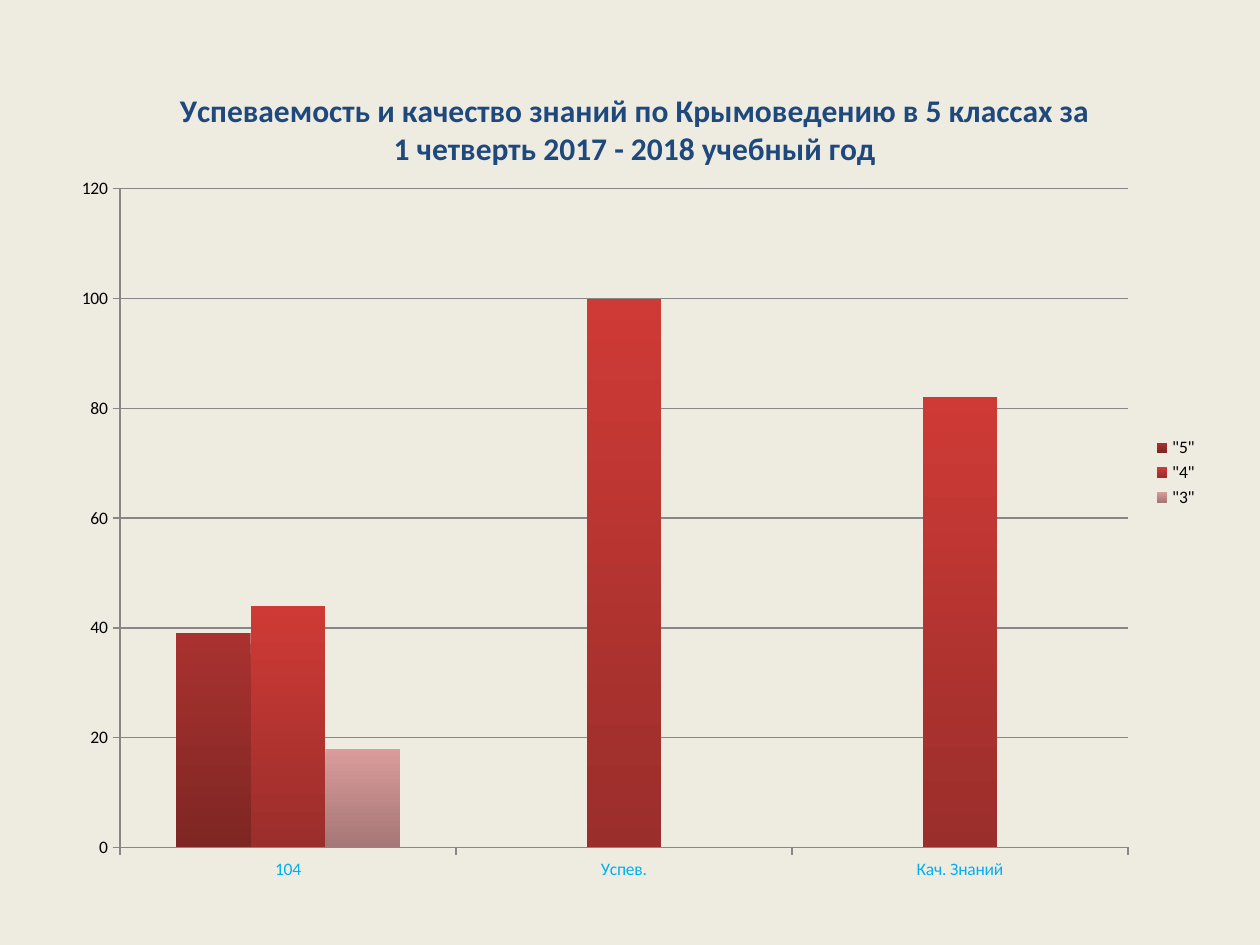
"""Build a slide with a column chart of grades and pass rates for fifth-year classes."""
from lxml import etree
from pptx import Presentation
from pptx.chart.data import CategoryChartData
from pptx.dml.color import RGBColor
from pptx.enum.chart import XL_CHART_TYPE, XL_LEGEND_POSITION, XL_TICK_MARK
from pptx.oxml.ns import qn
from pptx.util import Cm, Pt

COLUMNS = XL_CHART_TYPE.COLUMN_CLUSTERED
LEGEND_RIGHT = XL_LEGEND_POSITION.RIGHT
TICK_OUTSIDE = XL_TICK_MARK.OUTSIDE
COLORS = {
    "background": "EEECE1", "title": "1F497D", "text": "000000",
    "categories": "00B0F0", "lines": "878787",
}
SERIES = [
    ('"5"', (39, None, None), ("A93230", "7E2623")),
    ('"4"', (44, 100, 82), ("CF3A36", "9A2E2B")),
    ('"3"', (18, None, None), ("DA9C9B", "A57776")),
]


def color(name):
    return RGBColor.from_string(COLORS[name])


def set_layout(parent, before, **values):
    for old_layout in parent.findall(qn("c:layout")):
        parent.remove(old_layout)
    layout = etree.Element(qn("c:layout"))
    manual = etree.SubElement(layout, qn("c:manualLayout"))
    for key, value in values.items():
        etree.SubElement(manual, qn(f"c:{key}")).set("val", str(value))
    parent.find(qn(before)).addprevious(layout)


presentation = Presentation()
presentation.slide_width = Cm(25.4)
presentation.slide_height = Cm(19.05)
slide = presentation.slides.add_slide(presentation.slide_layouts[6])
slide.background.fill.solid()
slide.background.fill.fore_color.rgb = color("background")

chart_data = CategoryChartData()
chart_data.categories = ["104", "Успев.", "Кач. Знаний"]
for name, values, _ in SERIES:
    chart_data.add_series(name, values)
chart = slide.shapes.add_chart(
    COLUMNS, Cm(1.19), Cm(0.99), Cm(23.22), Cm(17.07), chart_data
).chart
chart.font.name = "Calibri"
chart.font.size = Pt(10)
chart.font.color.rgb = color("text")

title = chart.chart_title
title.include_in_layout = False
paragraph = title.text_frame.paragraphs[0]
paragraph.text = (
    "Успеваемость и качество знаний по Крымоведению в 5 классах за "
    "1 четверть 2017 - 2018 учебный год"
)
title_font = paragraph.runs[0].font
title_font.name = "Calibri"
title_font.size = Pt(18)
title_font.bold = True
title_font.color.rgb = color("title")
set_layout(title._element, "c:overlay", xMode="edge", yMode="edge", x=0.1, y=0.04)

plot = chart.plots[0]
plot.gap_width = 150
plot.overlap = 0
plot.vary_by_categories = False
set_layout(
    plot._element.getparent(), "c:barChart", layoutTarget="inner",
    xMode="edge", yMode="edge", x=0.053, y=0.165, w=0.875, h=0.778,
)
for series, (_, _, shades) in zip(plot.series, SERIES):
    fill = series.format.fill
    fill.gradient()
    fill.gradient_angle = 270
    for stop, shade, position in zip(fill.gradient_stops, shades, (0, 1)):
        stop.color.rgb = RGBColor.from_string(shade)
        stop.position = position
    series.format.line.fill.background()

value_axis = chart.value_axis
value_axis.minimum_scale = 0
value_axis.maximum_scale = 120
value_axis.major_unit = 20
value_axis.has_major_gridlines = True
for axis in (chart.category_axis, value_axis):
    axis.major_tick_mark = TICK_OUTSIDE
    axis.format.line.color.rgb = color("lines")
    axis.tick_labels.font.size = Pt(10)
value_axis.major_gridlines.format.line.color.rgb = color("lines")
chart.category_axis.tick_labels.font.color.rgb = color("categories")

chart.has_legend = True
chart.legend.position = LEGEND_RIGHT
chart.legend.include_in_layout = False

presentation.save("out.pptx")
